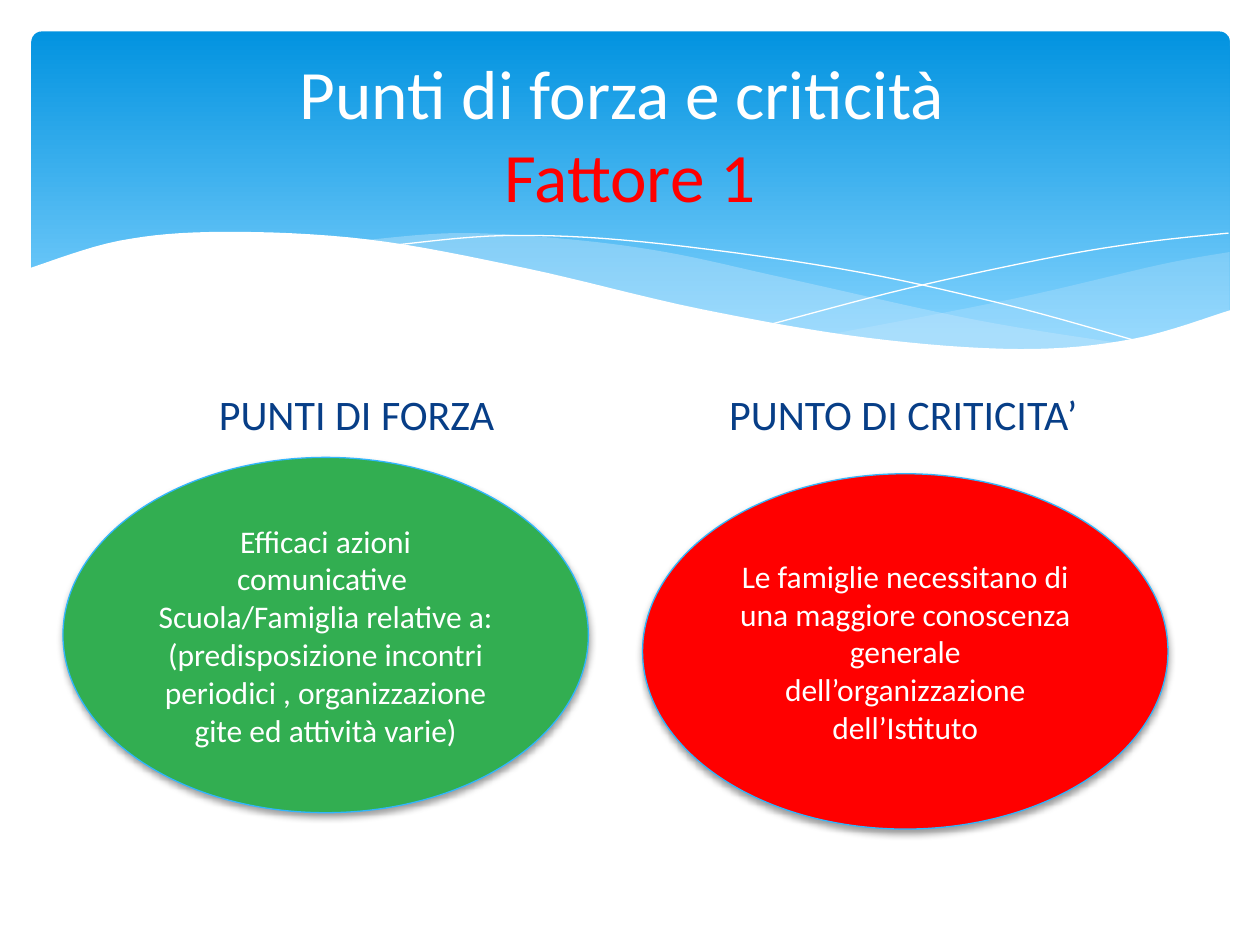
from dataclasses import dataclass

from lxml import etree
from pptx import Presentation
from pptx.dml.color import RGBColor
from pptx.enum.shapes import MSO_SHAPE
from pptx.enum.text import MSO_ANCHOR, PP_ALIGN
from pptx.oxml.ns import qn
from pptx.shapes.autoshape import Shape
from pptx.slide import Slide
from pptx.text.text import TextFrame
from pptx.util import Inches, Pt

ROUNDED = MSO_SHAPE.ROUNDED_RECTANGLE
OVAL = MSO_SHAPE.OVAL
MIDDLE = MSO_ANCHOR.MIDDLE
CENTER = PP_ALIGN.CENTER

FONT = "Calibri"
CURVE_STEPS = 8
COLORS = {
    "sky_top": "0293E0",
    "sky_bottom": "83D3FE",
    "wave": "C6E7FC",
    "white": "FFFFFF",
    "red": "FF0000",
    "green": "32AE51",
    "navy": "073E87",
    "outline": "31B6FD",
    "shadow": "000000",
}

Point = tuple[float, float]
Edge = tuple[Point, ...]


@dataclass(frozen=True)
class Wave:
    edges: tuple[Edge, ...]
    opacity: int = 100
    filled: bool = True
    color: str = "white"


@dataclass(frozen=True)
class Heading:
    left: float
    text: str


@dataclass(frozen=True)
class Bubble:
    left: float
    top: float
    color: str
    lines: tuple[str, ...]


WAVES = (
    Wave((
        ((9.76, 2), (9.21, 2.1), (8.05, 2.37), (6.61, 2.65)),
        ((6.61, 2.65), (7.45, 2.75), (8.35, 2.77), (9.13, 2.67), (9.76, 2.47)),
    ), opacity=29, color="wave"),
    Wave((
        ((8.93, 2.73), (7.75, 2.54), (6.29, 2.22), (5.28, 2), (4.42, 1.89), (3.61, 1.85),
         (2.86, 1.91)),
        ((2.86, 1.91), (3.83, 2.07), (5.3, 2.4), (6.65, 2.66), (7.85, 2.78), (8.93, 2.73)),
    ), opacity=40, color="wave"),
    Wave((
        ((3.09, 1.95), (4.01, 1.87), (5.1, 1.92), (6.65, 2.13), (7.95, 2.41), (9.07, 2.72)),
    ), filled=False),
    Wave((
        ((6.13, 2.57), (7.2, 2.29), (8.36, 2.04), (9.1, 1.92), (9.75, 1.85)),
    ), filled=False),
    Wave((
        ((9.77, 2.46), (8.99, 2.69), (8.09, 2.77), (6.88, 2.68), (5.55, 2.45), (4.18, 2.13),
         (2.92, 1.9), (1.77, 1.84), (0.95, 1.91), (0.23, 2.13)),
        ((0.23, 3.29), (9.77, 3.29)),
    )),
)
HEADINGS = (Heading(0.74, "PUNTI DI FORZA"), Heading(5.08, "PUNTO DI CRITICITA’"))
BUBBLES = (
    Bubble(0.5, 3.63, "green", (
        "Efficaci azioni comunicative ",
        "Scuola/Famiglia relative a:",
        "(predisposizione incontri periodici , organizzazione gite ed attività varie)",
    )),
    Bubble(5.1, 3.76, "red", (
        "Le famiglie necessitano di una maggiore conoscenza generale "
        "dell’organizzazione dell’Istituto",
    )),
)


def rgb(name: str) -> RGBColor:
    return RGBColor.from_string(COLORS[name])


def paint(shape: Shape, color: str) -> None:
    shape.fill.solid()
    shape.fill.fore_color.rgb = rgb(color)


def write(frame: TextFrame, lines: tuple[str, ...], size: float, color: str) -> None:
    frame.word_wrap = True
    frame.vertical_anchor = MIDDLE
    frame.text = "\n".join(lines)
    for para in frame.paragraphs:
        para.alignment = CENTER
        para.font.name = FONT
        para.font.size = Pt(size)
        para.font.color.rgb = rgb(color)


def blend(a: float, b: float, c: float, d: float, t: float) -> float:
    return b + t * (c - a + t * (2 * a - 5 * b + 4 * c - d + t * (3 * (b - c) + d - a))) / 2


def smooth(edge: Edge) -> list[Point]:
    padded = (edge[0], *edge, edge[-1])
    points = [edge[0]]
    for knots in zip(padded, padded[1:], padded[2:], padded[3:]):
        xs, ys = zip(*knots)
        for step in range(1, CURVE_STEPS + 1):
            t = step / CURVE_STEPS
            points.append((blend(*xs, t), blend(*ys, t)))
    return points


def draw_banner(page: Slide) -> None:
    banner = page.shapes.add_shape(ROUNDED, Inches(0.25), Inches(0.25), Inches(9.51), Inches(2.7))
    banner.adjustments[0] = 0.03
    banner.shadow.inherit = False
    banner.line.fill.background()
    banner.fill.gradient()
    banner.fill.gradient_angle = 270
    for stop, color, position in zip(
        banner.fill.gradient_stops, ("sky_top", "sky_bottom"), (0, 0.9)
    ):
        stop.color.rgb = rgb(color)
        stop.position = position


def draw_wave(page: Slide, wave: Wave) -> None:
    start, *rest = [(Inches(x), Inches(y)) for edge in wave.edges for x, y in smooth(edge)]
    builder = page.shapes.build_freeform(*start)
    builder.add_line_segments(rest, close=wave.filled)
    shape = builder.convert_to_shape()
    shape.shadow.inherit = False
    if wave.filled:
        paint(shape, wave.color)
        shape.line.fill.background()
        tint = shape.element.spPr.find(f"{qn('a:solidFill')}/{qn('a:srgbClr')}")
        etree.SubElement(tint, qn("a:alpha"), val=str(wave.opacity * 1000))
    else:
        shape.fill.background()
        shape.line.color.rgb = rgb(wave.color)
        shape.line.width = Pt(0)


def draw_title(page: Slide) -> None:
    box = page.shapes.add_textbox(Inches(0.5), Inches(0.37), Inches(9), Inches(1.37))
    write(box.text_frame, ("Punti di forza e criticità ",), 39.6, "white")
    para = box.text_frame.paragraphs[0]
    para.add_line_break()
    span = para.add_run()
    span.text = "Fattore 1"
    span.font.color.rgb = rgb("red")


def draw_heading(page: Slide, heading: Heading) -> None:
    box = page.shapes.add_textbox(Inches(heading.left), Inches(2.93), Inches(4.18), Inches(0.7))
    write(box.text_frame, (heading.text,), 24, "navy")
    box.text_frame.paragraphs[0].space_before = Pt(4.8)


def draw_bubble(page: Slide, bubble: Bubble) -> None:
    shape = page.shapes.add_shape(
        OVAL, Inches(bubble.left), Inches(bubble.top), Inches(4.17), Inches(2.82)
    )
    paint(shape, bubble.color)
    shape.line.color.rgb = rgb("outline")
    shape.line.width = Pt(0.75)
    shape.shadow.inherit = False
    effects = shape.element.spPr.find(qn("a:effectLst"))
    shadow = etree.SubElement(
        effects, qn("a:outerShdw"), blurRad=str(Pt(4)), dist=str(Pt(2)), dir="5400000"
    )
    tint = etree.SubElement(shadow, qn("a:srgbClr"), val=COLORS["shadow"])
    etree.SubElement(tint, qn("a:alpha"), val="38000")
    write(shape.text_frame, bubble.lines, 18, "white")


def main() -> None:
    deck = Presentation()
    deck.slide_width, deck.slide_height = Inches(10), Inches(7.5)
    page = deck.slides.add_slide(deck.slide_layouts[6])
    draw_banner(page)
    for wave in WAVES:
        draw_wave(page, wave)
    draw_title(page)
    for heading in HEADINGS:
        draw_heading(page, heading)
    for bubble in BUBBLES:
        draw_bubble(page, bubble)
    deck.save("out.pptx")


if __name__ == "__main__":
    main()
